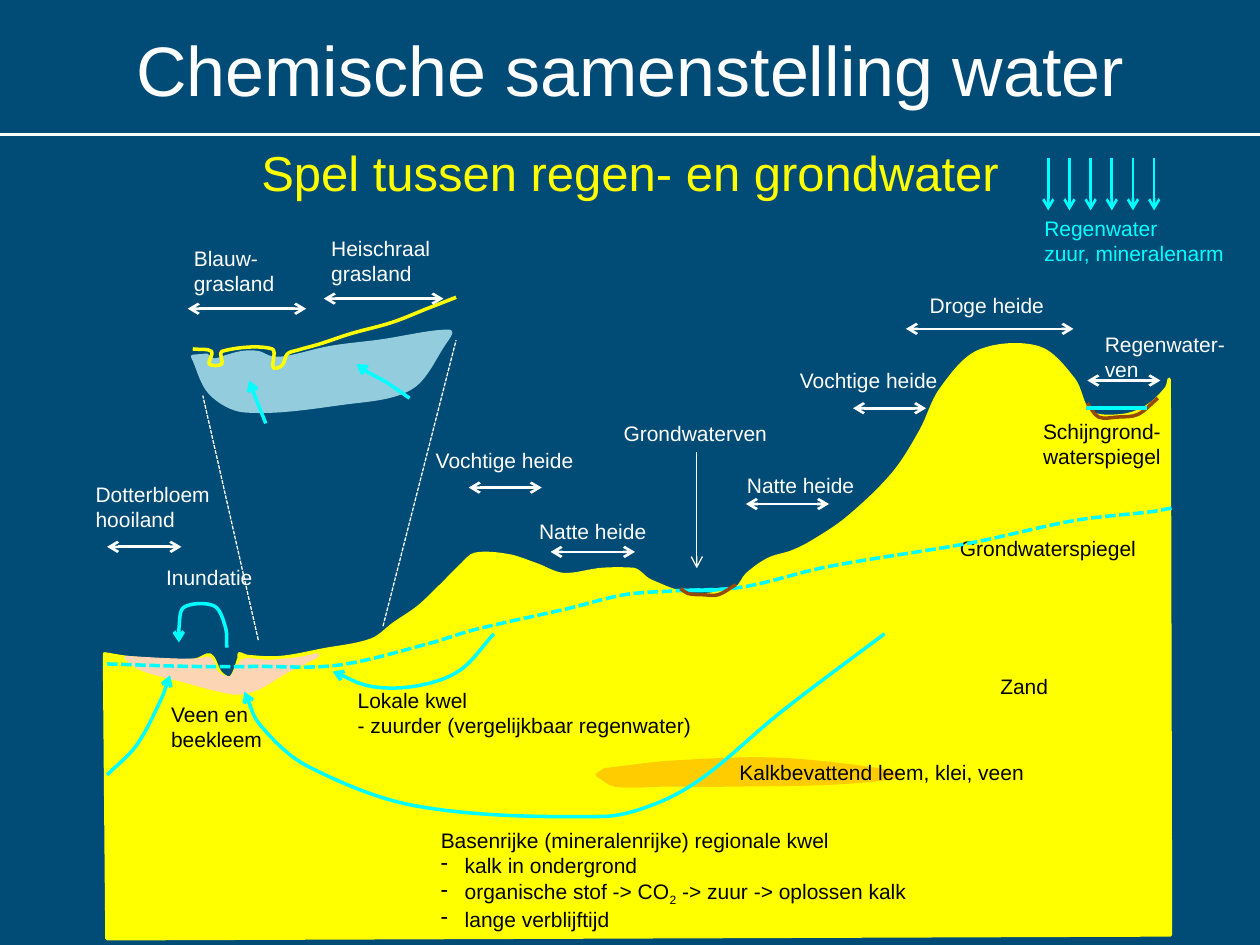
from math import dist

from lxml.etree import SubElement
from pptx import Presentation
from pptx.dml.color import RGBColor
from pptx.enum.dml import MSO_LINE
from pptx.enum.shapes import MSO_CONNECTOR
from pptx.enum.text import MSO_ANCHOR as Anchor, MSO_AUTO_SIZE as AutoSize, PP_ALIGN as Align
from pptx.oxml.ns import qn
from pptx.util import Cm, Pt

NAVY, WHITE, BLACK, YELLOW = "004C76", "FFFFFF", "000000", "FFFF00"
CYAN, BROWN, PEAT, LOAM, LENS = "00FFFF", "984807", "FCD5B5", "FFCC00", "93CDDD"
DASH = MSO_LINE.SQUARE_DOT


def inch(value):
    return Cm(value * 2.54)


def paint(fill, colour):
    fill.solid()
    fill.fore_color.rgb = RGBColor.from_string(colour)


def style_line(line, colour, width, dash=None, ends=()):
    paint(line.fill, colour)
    line.width = Pt(width)
    if dash:
        line.dash_style = dash
    for end in ends:
        SubElement(line._get_or_add_ln(), qn(f"a:{end}End"), type="arrow")


def format_runs(frame, colour, size):
    for paragraph in frame.paragraphs:
        for run in paragraph.runs:
            run.font.name = "Arial"
            run.font.size = Pt(size)
            paint(run.font.fill, colour)


class Region:
    """Draws parts relative to the top left corner of a box, in inches."""

    def __init__(self, slide, left, top):
        self.shapes, self.left, self.top = slide.shapes, left, top

    def at(self, x, y):
        return inch(self.left + x), inch(self.top + y)

    def text(self, x, y, width, height, words, colour, size=12):
        frame = self.shapes.add_textbox(*self.at(x, y), inch(width), inch(height)).text_frame
        frame.text = words
        format_runs(frame, colour, size)
        return frame

    def label(self, x, y, width, words, colour=WHITE):
        height = 0.1 + 0.2 * len(words.split("\n"))
        frame = self.text(x, y, width, height, words, colour)
        frame.word_wrap = False
        frame.auto_size = AutoSize.SHAPE_TO_FIT_TEXT
        return frame

    def straight(self, start, end, colour=WHITE, width=1.5, dash=None, ends=()):
        link = self.shapes.add_connector(MSO_CONNECTOR.STRAIGHT, *self.at(*start), *self.at(*end))
        style_line(link.line, colour, width, dash, ends)
        SubElement(link._element.spPr, qn("a:effectLst"))

    def span(self, x1, x2, y):
        self.straight((x1, y), (x2, y), ends=("head", "tail"))

    def curve(self, nodes, colour, filled=False, corners=(), dash=None, ends=()):
        """Smooth curve through the nodes, then straight edges to the corners."""
        start, *rest = [self.at(*node) for node in [*nodes, *corners]]
        builder = self.shapes.build_freeform(*start)
        builder.add_line_segments(rest, close=filled)
        shape = builder.convert_to_shape()
        shape.shadow.inherit = False
        if filled:
            paint(shape.fill, colour)
        else:
            shape.fill.background()
        style_line(shape.line, colour, 2, dash, ends)
        smooth_edges(shape, len(nodes))


def smooth_edges(shape, count):
    """Turns the edges between the first points into Bézier curves."""
    spots = list(shape._element.spPr.iter(qn("a:pt")))[:count]
    points = [(int(spot.get("x")), int(spot.get("y"))) for spot in spots]
    padded = [points[0], *points, points[-1]]
    slopes = []
    for before, here, after in zip(padded, padded[1:], padded[2:]):
        length = dist(before, here) + dist(here, after)
        slopes.append([(b - a) / length for a, b in zip(before, after)])
    for i, spot in enumerate(spots[1:]):
        edge = spot.getparent()
        edge.tag = qn("a:cubicBezTo")
        third = dist(points[i], points[i + 1]) / 3
        for place, (point, slope, sign) in enumerate(
            [(points[i], slopes[i], 1), (points[i + 1], slopes[i + 1], -1)]
        ):
            x, y = (round(p + sign * s * third) for p, s in zip(point, slope))
            handle = SubElement(edge, qn("a:pt"), x=str(x), y=str(y))
            edge.insert(place, handle)


def add_heading(slide, left, top):
    box = Region(slide, left, top)
    box.straight((0, 1.07), (10, 1.07))
    title = box.text(0, 0.08, 10, 0.92, "Chemische samenstelling water", WHITE, 40)
    subtitle = box.text(0, 1.08, 10, 0.57, "Spel tussen regen- en grondwater", YELLOW, 28)
    title.vertical_anchor = Anchor.MIDDLE
    for frame in (title, subtitle):
        frame.word_wrap = True
        frame.paragraphs[0].alignment = Align.CENTER


def add_rain(slide, left, top):
    box = Region(slide, left, top)
    for i in range(6):
        x = 0.32 + 0.168 * i
        box.straight((x, 0.25), (x, 0.67), CYAN, ends=("tail",))
    box.label(0.19, 0.66, 1.64, "Regenwater\nzuur, mineralenarm", CYAN)


def add_grassland_detail(slide, left, top):
    box = Region(slide, left, top)
    # Water body with the ground surface above it
    box.curve([(0.53, 1.83), (0.67, 2.12), (0.94, 2.26), (1.72, 2.2), (2.26, 2.08), (2.53, 1.72),
               (2.57, 1.63), (2.01, 1.71), (1.62, 1.76), (1.27, 1.84), (1.15, 1.84), (1.05, 1.8),
               (0.92, 1.8), (0.77, 1.84), (0.7, 1.86), (0.64, 1.82)], LENS, filled=True)
    box.curve([(2.62, 1.36), (2.39, 1.45), (2.11, 1.56), (1.78, 1.65), (1.54, 1.73), (1.36, 1.78),
               (1.28, 1.81), (1.24, 1.9), (1.17, 1.92), (1.16, 1.77), (0.76, 1.79), (0.76, 1.89),
               (0.66, 1.89), (0.68, 1.79), (0.53, 1.77)], YELLOW)
    # Rising groundwater
    box.curve([(1.11, 2.36), (1.03, 2.16), (0.98, 2.02)], CYAN, ends=("tail",))
    box.curve([(2.25, 2.16), (2.06, 2.03), (1.93, 1.96), (1.83, 1.89)], CYAN, ends=("tail",))
    # Vegetation zones
    box.span(1.57, 2.52, 1.37)
    box.label(1.53, 0.82, 0.99, "Heischraal\ngrasland")
    box.span(0.49, 1.43, 1.45)
    box.label(0.44, 0.9, 0.84, "Blauw-\ngrasland")
    # Zoom lines down to the landscape
    box.straight((1.05, 4.08), (0.61, 2.14), width=0.75, dash=DASH)
    box.straight((2.04, 3.97), (2.62, 1.7), width=0.75, dash=DASH)


def add_landscape(slide, left, top):
    box = Region(slide, left, top)
    # Sand body, pool beds and soil layers
    box.straight((5.85, 2.68), (5.32, 2.69), CYAN, 2.25)
    box.curve([(0.83, 3.19), (1.02, 3.22), (1.28, 3.24), (1.55, 3.24), (1.67, 3.2), (1.75, 3.34),
               (1.83, 3.38), (1.9, 3.22), (1.9, 3.19), (1.96, 3.21), (2.22, 3.22), (2.56, 3.16),
               (2.95, 3.08), (3.13, 2.95), (3.32, 2.82), (3.5, 2.65), (3.67, 2.48), (3.77, 2.4),
               (4.03, 2.41), (4.25, 2.48), (4.47, 2.56), (4.78, 2.52), (5.03, 2.52), (5.07, 2.54),
               (5.16, 2.61), (5.49, 2.72), (5.84, 2.67), (5.93, 2.56), (6.1, 2.44), (6.29, 2.38),
               (6.45, 2.3), (6.73, 2.11), (7.09, 1.76), (7.31, 1.42), (7.47, 1.09), (7.77, 0.79),
               (8.24, 0.76), (8.52, 1.01), (8.65, 1.27), (8.9, 1.3), (9.1, 1.23), (9.26, 1.08),
               (9.28, 1.01)], YELLOW, filled=True, corners=[(9.29, 5.42), (0.85, 5.45)])
    box.curve([(8.63, 1.2), (8.72, 1.31), (8.87, 1.31), (9.03, 1.29), (9.19, 1.16)], BROWN)
    box.curve([(1, 3.22), (1.38, 3.24), (1.57, 3.24), (1.67, 3.23), (1.72, 3.34), (1.83, 3.38),
               (1.89, 3.29), (1.94, 3.24), (2.12, 3.25), (2.37, 3.23), (2.52, 3.2), (2.27, 3.33),
               (2.05, 3.46), (1.9, 3.5), (1.71, 3.47), (1.45, 3.4), (1.18, 3.33), (1.08, 3.29)],
              PEAT, filled=True)
    box.curve([(4.8, 4.11), (5.35, 4.05), (6.23, 4.03), (7.14, 4.15), (6.69, 4.21), (5.79, 4.23),
               (5.28, 4.23), (4.88, 4.23), (4.74, 4.15)], LOAM, filled=True)

    # Vegetation zones
    for x1, x2, y in [(7.19, 8.52, 0.61), (8.63, 9.21, 1.02), (6.77, 7.35, 1.24), (4.37, 5.04, 2.38),
                      (3.72, 4.3, 1.87), (5.92, 6.58, 2), (0.85, 1.44, 2.34)]:
        box.span(x1, x2, y)
    for x, y, width, words in [
        (8.67, 0.58, 1.16, "Regenwater-\nven"), (7.28, 0.27, 1.15, "Droge heide"),
        (4.18, 2.07, 1.06, "Natte heide"), (6.25, 0.87, 1.3, "Vochtige heide"),
        (3.36, 1.5, 1.3, "Vochtige heide"), (5.83, 1.7, 1.06, "Natte heide"),
        (4.85, 1.29, 1.35, "Grondwaterven"), (1.22, 2.43, 0.89, "Inundatie"),
        (0.66, 1.77, 1.12, "Dotterbloem\nhooiland"),
    ]:
        box.label(x, y, width, words)
    box.straight((5.53, 1.59), (5.53, 2.51), width=0.75, ends=("tail",))

    # Seepage and flooding: local, flood, valley edge, regional
    for flow in [
        [(3.92, 3.03), (3.65, 3.32), (3.33, 3.44), (2.96, 3.45), (2.64, 3.33)],
        [(1.8, 3.14), (1.79, 2.98), (1.7, 2.81), (1.46, 2.82), (1.42, 2.99), (1.42, 3.1)],
        [(0.85, 4.15), (1.08, 3.92), (1.27, 3.57), (1.35, 3.36)],
        [(7.02, 3.03), (6.2, 3.65), (5.58, 4.17), (5.2, 4.38), (4.78, 4.48), (3.32, 4.4),
         (2.44, 4.08), (2.07, 3.76), (1.94, 3.49)],
    ]:
        box.curve(flow, CYAN, ends=("tail",))

    # Names inside the sand body
    for x, y, width, words in [
        (8.18, 1.27, 1.14, "Schijngrond-\nwaterspiegel"), (1.26, 3.52, 0.93, "Veen en\nbeekleem"),
        (2.74, 3.41, 2.87, "Lokale kwel\n- zuurder (vergelijkbaar regenwater)"),
        (7.52, 2.2, 1.61, "Grondwaterspiegel"), (7.84, 3.3, 0.58, "Zand"),
        (5.77, 3.98, 2.48, "Kalkbevattend leem, klei, veen"),
    ]:
        box.label(x, y, width, words, BLACK)
    regional = box.label(3.4, 4.52, 3.93, "Basenrijke (mineralenrijke) regionale kwel\nkalk in ondergrond\n"
                         "organische stof -> CO\nlange verblijftijd", BLACK)
    for cause in regional.paragraphs[1:]:
        indent = cause._p.get_or_add_pPr()
        indent.set("marL", str(inch(0.19)))
        indent.set("indent", str(-inch(0.19)))
        SubElement(indent, qn("a:buChar"), char="-")
    organic = regional.paragraphs[2]
    for words, baseline in [("2", "-25000"), (" -> zuur -> oplossen kalk", "0")]:
        run = organic.add_run()
        run.text = words
        run.font._element.set("baseline", baseline)
    format_runs(regional, BLACK, 12)

    # Groundwater table and water in the pools
    box.curve([(0.85, 3.27), (1.53, 3.29), (2.03, 3.29), (2.68, 3.28), (3.4, 3.11), (3.76, 3),
               (4.51, 2.83), (4.96, 2.72), (5.36, 2.69), (5.89, 2.66), (6.56, 2.5), (7.7, 2.31),
               (8.54, 2.13), (9.15, 2.06), (9.31, 2.03)], CYAN, dash=DASH)
    box.straight((9.1, 1.24), (8.62, 1.24), CYAN, 2.25)
    box.curve([(5.4, 2.67), (5.46, 2.71), (5.58, 2.72), (5.7, 2.72), (5.84, 2.64)], BROWN)


def main():
    deck = Presentation()
    deck.slide_width, deck.slide_height = inch(10), inch(7.5)
    slide = deck.slides.add_slide(deck.slide_layouts[6])
    paint(slide.background.fill, NAVY)
    add_heading(slide, 0, 0)
    add_landscape(slide, 0, 2)
    add_grassland_detail(slide, 1, 1)
    add_rain(slide, 8, 1)
    deck.save("out.pptx")


if __name__ == "__main__":
    main()
